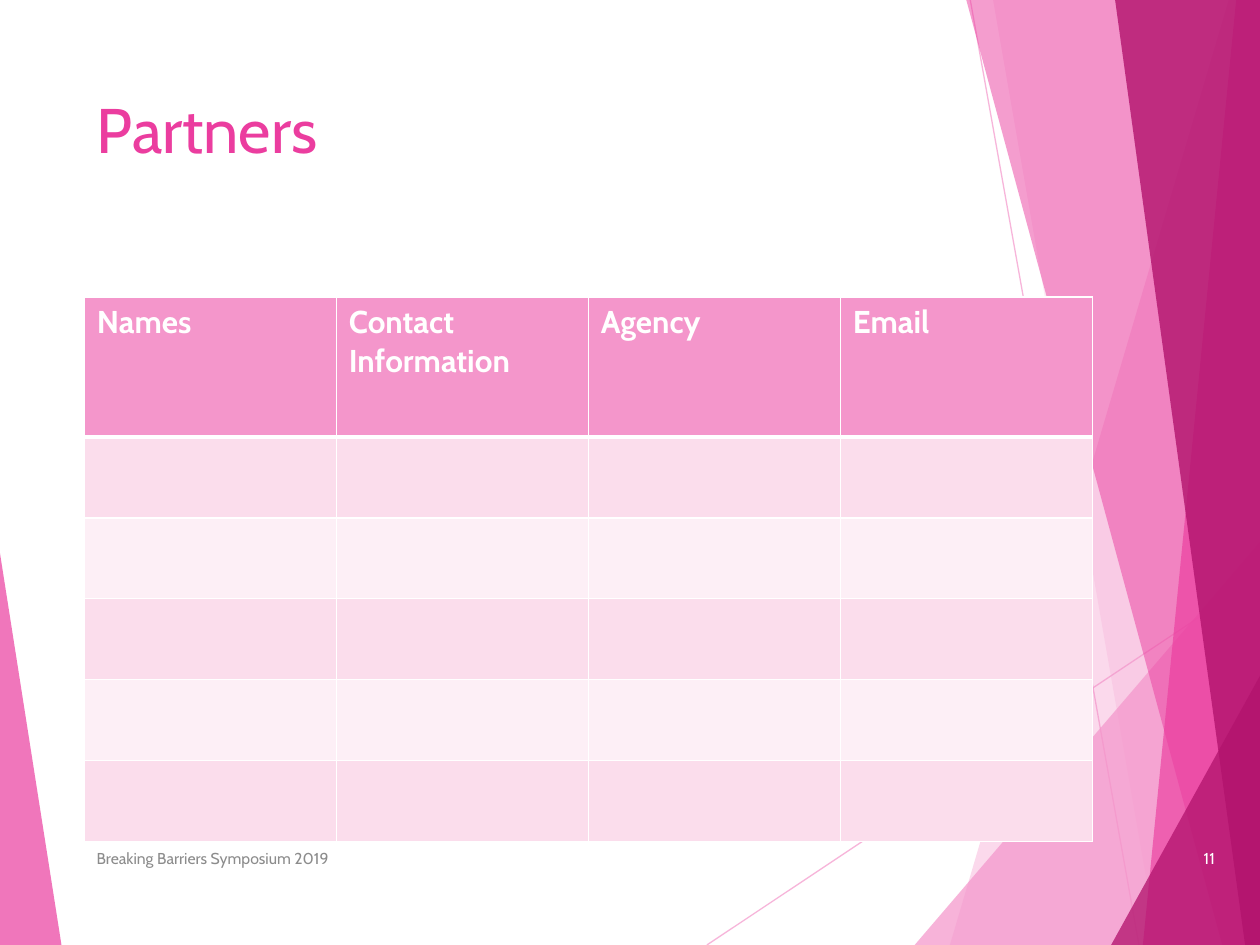
import dataclasses
import typing

import pptx
import pptx.dml.color
import pptx.enum.shapes
import pptx.enum.text
import pptx.oxml.ns
import pptx.oxml.xmlchemy
import pptx.util
from pptx.util import Cm

FONT = "Cabin"
LIGHT_PINK, PINK, MAGENTA = "F496CB", "EB3D9F", "B2136D"
WHITE, GREY = "FFFFFF", "8C8C8C"
BAND_COLORS = ("FBDDEC", "FDEFF6")
RIGHT, BOTTOM = 25.42, 19.05
MARGIN = 1.7
FOOTER_TOP, FOOTER_HEIGHT = 16.79, 1.02
HEADERS = ("Names", "Contact Information", "Agency", "Email")
COLUMN_WIDTH = 5.08
ROW_HEIGHTS = (2.82,) + (1.63,) * 5

Point = tuple[float, float]


@dataclasses.dataclass
class Facet:
    points: list[Point]
    color: str
    opacity: int


@dataclasses.dataclass
class Ray:
    start: Point
    end: Point


def right_band(top_x: float, bottom_x: float) -> list[Point]:
    """Outline from a slanted left side to the right edge of the slide."""
    return [(top_x, 0), (bottom_x, BOTTOM), (RIGHT, BOTTOM), (RIGHT, 0)]


def right_corner(left: float, top: float) -> list[Point]:
    """Triangle in the bottom right corner of the slide."""
    return [(left, BOTTOM), (RIGHT, top), (RIGHT, BOTTOM)]


RAYS = [
    Ray((14.25, BOTTOM), (RIGHT, 11.61)),
    Ray((19.56, 0), (22.96, BOTTOM)),
]
FACETS = [
    Facet(right_band(24.77, 19.15), LIGHT_PINK, 36),
    Facet(right_band(20.02, 23.34), LIGHT_PINK, 20),
    Facet(right_corner(18.44, 10.9), LIGHT_PINK, 72),
    Facet(right_band(19.48, 24.64), PINK, 50),
    Facet(right_band(24.92, 23.04), PINK, 66),
    Facet(right_band(22.48, 25.1), MAGENTA, 80),
    Facet(right_corner(22.4, 13.59), MAGENTA, 76),
    Facet([(0, 11.15), (1.24, BOTTOM), (0, BOTTOM)], PINK, 70),
]


def rgb(color: str) -> pptx.dml.color.RGBColor:
    return pptx.dml.color.RGBColor.from_string(color)


def new_element(tag: str) -> typing.Any:
    return pptx.oxml.xmlchemy.OxmlElement(tag)


def set_opacity(element: typing.Any, percent: int) -> None:
    for color in element.iter(pptx.oxml.ns.qn("a:srgbClr")):
        alpha = new_element("a:alpha")
        alpha.set("val", str(percent * 1000))
        color.append(alpha)


def write_text(frame: typing.Any, text: str, *, size: float, color: str,
               bold: bool = False, align: str = "LEFT",
               anchor: str = "TOP") -> None:
    frame.word_wrap = True
    frame.vertical_anchor = getattr(pptx.enum.text.MSO_ANCHOR, anchor)
    paragraph = frame.paragraphs[0]
    paragraph.alignment = getattr(pptx.enum.text.PP_ALIGN, align)
    run = paragraph.add_run()
    run.text = text
    run.font.name = FONT
    run.font.size = pptx.util.Pt(size)
    run.font.bold = bold
    run.font.color.rgb = rgb(color)


def draw_ray(slide: typing.Any, ray: Ray) -> None:
    connector = slide.shapes.add_connector(
        pptx.enum.shapes.MSO_CONNECTOR.STRAIGHT,
        *(Cm(value) for value in ray.start + ray.end))
    connector.line.color.rgb = rgb(LIGHT_PINK)
    connector.line.width = pptx.util.Pt(0.75)
    properties = connector._element.spPr
    set_opacity(properties, 70)
    properties.append(new_element("a:effectLst"))


def draw_facet(slide: typing.Any, facet: Facet) -> None:
    points = [(Cm(x), Cm(y)) for x, y in facet.points]
    builder = slide.shapes.build_freeform(*points[0])
    builder.add_line_segments(points[1:], close=True)
    shape = builder.convert_to_shape()
    shape.shadow.inherit = False
    shape.line.fill.background()
    shape.fill.solid()
    shape.fill.fore_color.rgb = rgb(facet.color)
    set_opacity(shape._element.spPr, facet.opacity)


def set_borders(cell: typing.Any, bottom: int, top: int) -> None:
    properties = cell._tc.get_or_add_tcPr()
    widths = {"lnL": 1, "lnR": 1, "lnT": top, "lnB": bottom}
    for position, (name, width) in enumerate(widths.items()):
        line = new_element(f"a:{name}")
        line.set("w", str(int(pptx.util.Pt(width))))
        fill = new_element("a:solidFill")
        color = new_element("a:srgbClr")
        color.set("val", WHITE)
        fill.append(color)
        line.append(fill)
        properties.insert(position, line)


def draw_table(slide: typing.Any) -> None:
    table = slide.shapes.add_table(
        len(ROW_HEIGHTS), len(HEADERS), Cm(MARGIN), Cm(5.99),
        Cm(COLUMN_WIDTH * len(HEADERS)), Cm(sum(ROW_HEIGHTS))).table
    for column in table.columns:
        column.width = Cm(COLUMN_WIDTH)
    for index, (row, height) in enumerate(zip(table.rows, ROW_HEIGHTS)):
        row.height = Cm(height)
        for cell in row.cells:
            cell.fill.solid()
            cell.fill.fore_color.rgb = rgb(
                BAND_COLORS[(index - 1) % 2] if index else LIGHT_PINK)
            set_borders(cell, bottom=1 if index else 3,
                        top=3 if index == 1 else 1)
    for cell, header in zip(table.rows[0].cells, HEADERS):
        write_text(cell.text_frame, header, size=18, color=WHITE, bold=True)


def draw_footer(slide: typing.Any, text: str, left: float, width: float,
                color: str, align: str) -> None:
    box = slide.shapes.add_textbox(
        Cm(left), Cm(FOOTER_TOP), Cm(width), Cm(FOOTER_HEIGHT))
    write_text(box.text_frame, text, size=9, color=color, align=align,
               anchor="MIDDLE")


def main() -> None:
    presentation = pptx.Presentation()
    presentation.slide_width, presentation.slide_height = Cm(25.4), Cm(19.05)
    slide = presentation.slides.add_slide(presentation.slide_layouts[5])

    for ray in RAYS:
        draw_ray(slide, ray)
    for facet in FACETS:
        draw_facet(slide, facet)

    title = slide.shapes.title
    title.left, title.top = Cm(MARGIN), Cm(MARGIN)
    title.width, title.height = Cm(17.63), Cm(3.66)
    write_text(title.text_frame, "Partners", size=36, color=PINK)

    draw_table(slide)
    draw_footer(slide, "Breaking Barriers Symposium 2019", MARGIN, 12.85,
                GREY, "LEFT")
    draw_footer(slide, "11", 23.32, 1.42, WHITE, "RIGHT")
    presentation.save("out.pptx")


if __name__ == "__main__":
    main()
